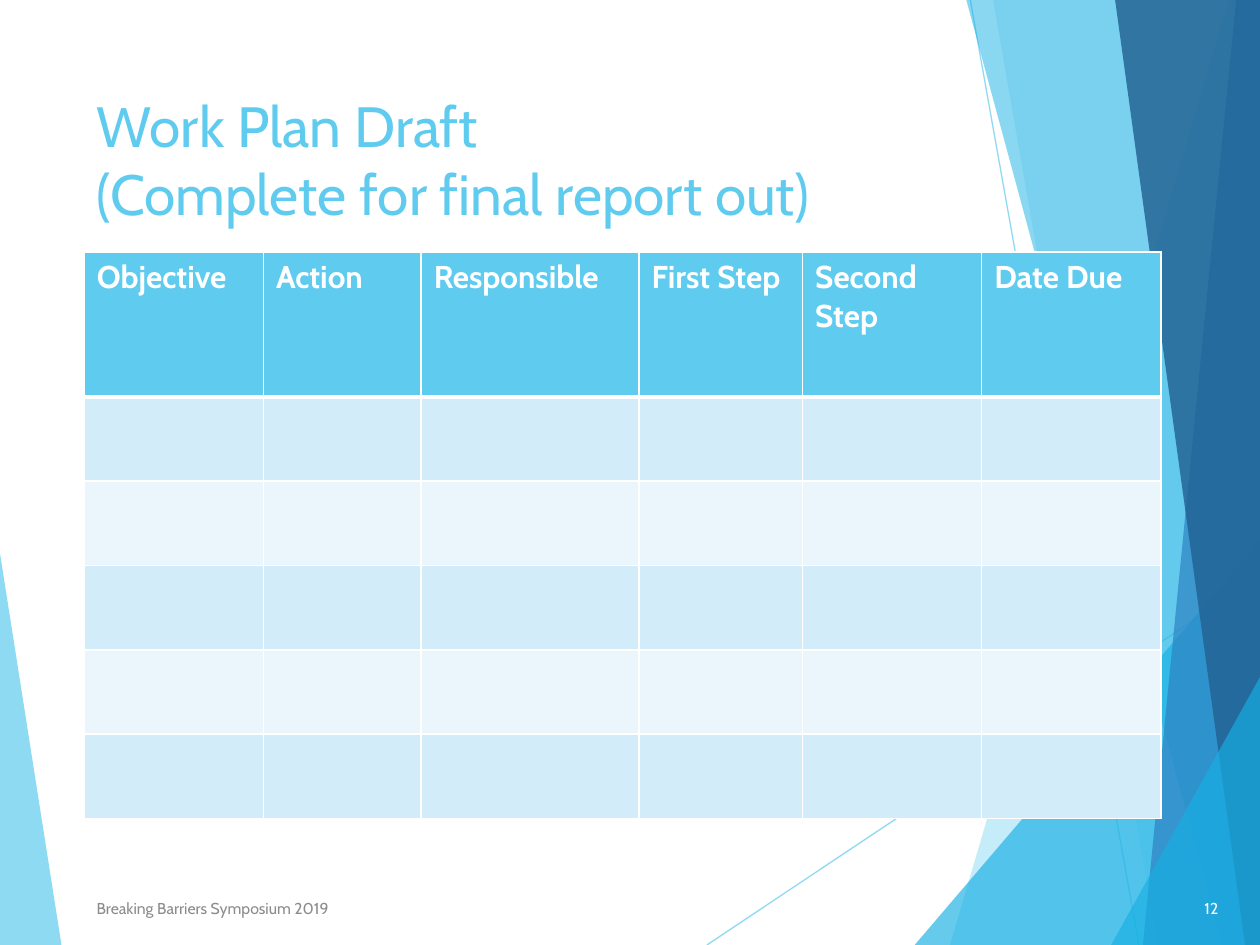
from lxml.etree import SubElement
from pptx import Presentation
from pptx.dml.color import RGBColor
from pptx.enum.shapes import MSO_CONNECTOR
from pptx.enum.text import MSO_ANCHOR, MSO_AUTO_SIZE, PP_ALIGN
from pptx.oxml.ns import qn
from pptx.util import Cm, Pt

WIDTH, HEIGHT = 25.4, 19.05
MARGIN = 1.7
FONT = "Cabin"
COLORS = {
    "sky": "5FCBEF",
    "cyan": "17B0E4",
    "blue": "2E83C3",
    "navy": "226292",
    "band_dark": "D2ECF9",
    "band_light": "EAF6FC",
    "white": "FFFFFF",
    "gray": "8C8C8C",
}

TITLE_LINES = ["Work Plan Draft ", "(Complete for final report out)"]
COLUMNS = [
    ("Objective", 3.61),
    ("Action", 3.18),
    ("Responsible", 4.39),
    ("First Step", 3.3),
    ("Second Step", 3.61),
    ("Date Due", 3.61),
]
HEADER_HEIGHT, ROW_HEIGHT, BODY_ROWS = 2.92, 1.7, 5
FOOTERS = [
    ("Breaking Barriers Symposium 2019", MARGIN, 12.85, "gray", PP_ALIGN.LEFT),
    ("12", 23.39, 1.42, "white", PP_ALIGN.RIGHT),
]

LEFT_WEDGE = [(0, 11.15), (1.24, HEIGHT), (0, HEIGHT)]
THIN_LINES = [((14.25, HEIGHT), (WIDTH, 11.61)), ((19.56, 0), (22.96, HEIGHT))]
RIGHT_PANELS = [
    (24.77, 19.15, 0, "sky", 36),
    (20.02, 23.34, 0, "sky", 20),
    (WIDTH, 18.44, 10.9, "cyan", 66),
    (19.48, 24.64, 0, "cyan", 50),
    (24.92, 23.04, 0, "blue", 70),
    (22.48, 25.1, 0, "navy", 82),
    (WIDTH, 22.4, 13.65, "cyan", 66),
]


def color(name):
    return RGBColor.from_string(COLORS[name])


def set_opacity(fill_parent, percent):
    rgb = next(fill_parent.iter(qn("a:srgbClr")))
    SubElement(rgb, qn("a:alpha"), val=str(percent * 1000))


def add_panel(slide, points, name, opacity):
    corners = [(Cm(x), Cm(y)) for x, y in points]
    builder = slide.shapes.build_freeform(*corners[0])
    builder.add_line_segments(corners[1:], close=True)
    shape = builder.convert_to_shape()
    shape.shadow.inherit = False
    shape.fill.solid()
    shape.fill.fore_color.rgb = color(name)
    shape.line.fill.background()
    set_opacity(shape._element.spPr, opacity)


def add_thin_line(slide, start, end):
    line = slide.shapes.add_connector(
        MSO_CONNECTOR.STRAIGHT, *(Cm(value) for value in start + end)
    )
    line.line.color.rgb = color("sky")
    line.line.width = Pt(0.75)
    properties = line._element.spPr
    set_opacity(properties, 70)
    SubElement(properties, qn("a:effectLst"))


def add_run(paragraph, text, size, name, bold=False):
    run = paragraph.add_run()
    run.text = text
    run.font.name = FONT
    run.font.size = Pt(size)
    run.font.bold = bold
    run.font.color.rgb = color(name)


def add_title(slide):
    title = slide.shapes.title
    title.left, title.top, title.width, title.height = map(Cm, (MARGIN, MARGIN, 17.63, 2))
    frame = title.text_frame
    frame.word_wrap = True
    frame.auto_size = MSO_AUTO_SIZE.NONE
    frame.vertical_anchor = MSO_ANCHOR.TOP
    paragraph = frame.paragraphs[0]
    paragraph.alignment = PP_ALIGN.LEFT
    for index, text in enumerate(TITLE_LINES):
        if index:
            paragraph.add_line_break()
        add_run(paragraph, text, 32.4, "sky")
    slide.shapes._spTree.append(title._element)


def format_cell(cell, fill, top, bottom):
    properties = cell._tc.get_or_add_tcPr()
    for side, width in (("L", 1), ("R", 1), ("T", top), ("B", bottom)):
        border = SubElement(properties, qn(f"a:ln{side}"), w=str(Pt(width)))
        solid = SubElement(border, qn("a:solidFill"))
        SubElement(solid, qn("a:srgbClr"), val=COLORS["white"])
    cell.fill.solid()
    cell.fill.fore_color.rgb = color(fill)


def add_work_plan(slide):
    heights = [HEADER_HEIGHT] + [ROW_HEIGHT] * BODY_ROWS
    total_width = sum(width for _, width in COLUMNS)
    table = slide.shapes.add_table(
        len(heights), len(COLUMNS), Cm(MARGIN), Cm(5.08), Cm(total_width), Cm(sum(heights))
    ).table
    for row, height in zip(table.rows, heights):
        row.height = Cm(height)
    for index, (heading, width) in enumerate(COLUMNS):
        table.columns[index].width = Cm(width)
        add_run(table.cell(0, index).text_frame.paragraphs[0], heading, 18, "white", True)
        format_cell(table.cell(0, index), "sky", 1, 3)
        for row in range(1, len(heights)):
            band = "band_dark" if row % 2 else "band_light"
            format_cell(table.cell(row, index), band, 3 if row == 1 else 1, 1)


def add_footer(slide, text, left, width, name, alignment):
    box = slide.shapes.add_textbox(Cm(left), Cm(17.8), Cm(width), Cm(1.02))
    frame = box.text_frame
    frame.word_wrap = True
    frame.vertical_anchor = MSO_ANCHOR.MIDDLE
    paragraph = frame.paragraphs[0]
    paragraph.alignment = alignment
    add_run(paragraph, text, 9, name)


def main():
    presentation = Presentation()
    presentation.slide_width, presentation.slide_height = Cm(WIDTH), Cm(HEIGHT)
    slide = presentation.slides.add_slide(presentation.slide_layouts[5])
    add_panel(slide, LEFT_WEDGE, "sky", 70)
    for start, end in THIN_LINES:
        add_thin_line(slide, start, end)
    for top_x, bottom_x, top, name, opacity in RIGHT_PANELS:
        points = [(top_x, top), (bottom_x, HEIGHT), (WIDTH, HEIGHT)]
        if top_x < WIDTH:
            points.append((WIDTH, top))
        add_panel(slide, points, name, opacity)
    add_title(slide)
    add_work_plan(slide)
    for footer in FOOTERS:
        add_footer(slide, *footer)
    presentation.save("out.pptx")


if __name__ == "__main__":
    main()
